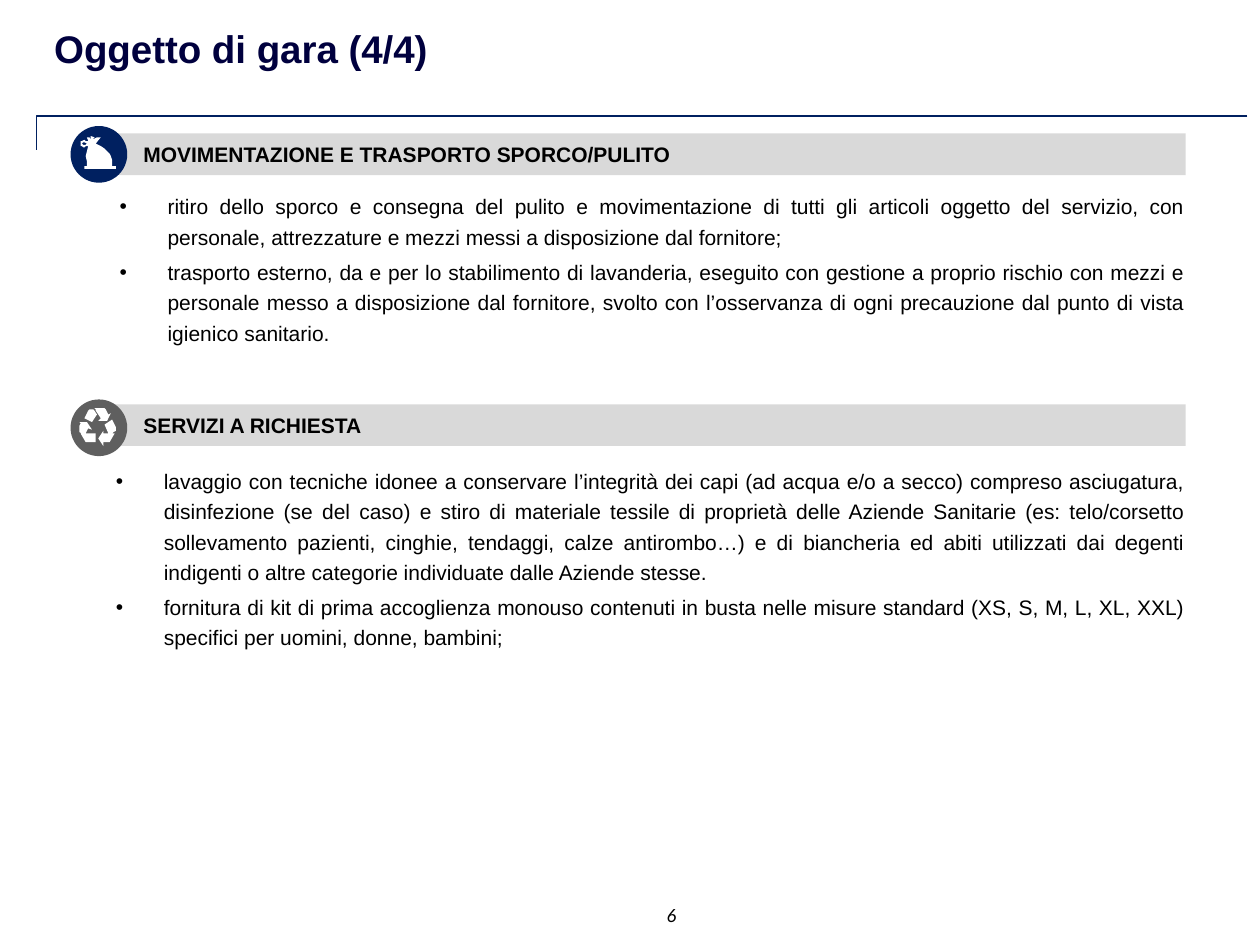
from dataclasses import dataclass

from lxml import etree
from pptx import Presentation
from pptx.dml.color import RGBColor
from pptx.enum.shapes import MSO_CONNECTOR, MSO_SHAPE
from pptx.enum.text import MSO_ANCHOR, MSO_AUTO_SIZE, PP_ALIGN
from pptx.oxml.ns import qn
from pptx.util import Pt

PX = 9144  # EMU in one px, 100 px to the inch
ELBOW = MSO_CONNECTOR.ELBOW
RECTANGLE, OVAL = MSO_SHAPE.RECTANGLE, MSO_SHAPE.OVAL
TOP, MIDDLE = MSO_ANCHOR.TOP, MSO_ANCHOR.MIDDLE
LEFT, CENTER, JUSTIFY = PP_ALIGN.LEFT, PP_ALIGN.CENTER, PP_ALIGN.JUSTIFY
NO_FIT = MSO_AUTO_SIZE.NONE
TWO_CONTENT = 3


@dataclass(frozen=True)
class Theme:
    title: str = "00003E"
    navy: str = "002060"
    grey: str = "5F5F5F"
    bar: str = "D9D9D9"
    text: str = "000000"
    white: str = "FFFFFF"
    font: str = "Arial"
    number_font: str = "Calibri"
    title_size: int = 22
    text_size: int = 12
    number_size: int = 11


# Outlines are in px on the page, one list per closed contour.
LAUNDRY_BAG = [
    [(69, 114), (67, 113), (66, 113), (65, 114), (66, 115), (67, 115), (68, 115)],
    [(70, 112), (69, 109), (71, 109), (72, 111), (72, 108), (75, 109), (73, 111),
     (77, 109), (80, 109), (76, 114), (80, 116), (83, 118), (85, 120), (87, 122),
     (88, 124), (89, 127), (89, 132), (92, 132), (92, 134), (67, 134), (67, 132),
     (69, 132), (69, 128), (68, 124), (69, 120), (70, 116), (68, 116), (67, 117),
     (66, 117), (65, 116), (64, 116), (64, 112), (65, 112), (67, 111), (68, 112)],
]
RECYCLING = [
    [(67, 332), (73, 335), (77, 329), (75, 326), (74, 325), (71, 325), (70, 326)],
    [(75, 324), (83, 324), (84, 325), (86, 329), (88, 328), (85, 334), (78, 334),
     (80, 332), (76, 326), (76, 325)],
    [(89, 333), (83, 337), (86, 344), (89, 344), (90, 343), (92, 342), (92, 339)],
    [(91, 344), (87, 351), (82, 351), (82, 354), (78, 348), (82, 342), (82, 344),
     (90, 344)],
    [(76, 351), (76, 344), (64, 344), (68, 351)],
    [(68, 344), (65, 344), (63, 343), (63, 338), (64, 336), (63, 335), (69, 335),
     (73, 341), (70, 340)],
]

MOVING = [
    "ritiro dello sporco e consegna del pulito e movimentazione di tutti gli articoli "
    "oggetto del servizio, con personale, attrezzature e mezzi messi a disposizione "
    "dal fornitore;",
    "trasporto esterno, da e per lo stabilimento di lavanderia, eseguito con gestione "
    "a proprio rischio con mezzi e personale messo a disposizione dal fornitore, svolto "
    "con l’osservanza di ogni precauzione dal punto di vista igienico sanitario.",
]
ON_REQUEST = [
    "lavaggio con tecniche idonee a conservare l’integrità dei capi (ad acqua e/o a "
    "secco) compreso asciugatura, disinfezione (se del caso) e stiro di materiale "
    "tessile di proprietà delle Aziende Sanitarie (es: telo/corsetto sollevamento "
    "pazienti, cinghie, tendaggi, calze antirombo…) e di biancheria ed abiti utilizzati "
    "dai degenti indigenti o altre categorie individuate dalle Aziende stesse.",
    "fornitura di kit di prima accoglienza monouso contenuti in busta nelle misure "
    "standard (XS, S, M, L, XL, XXL) specifici per uomini, donne, bambini;",
]


class Page:
    def __init__(self, deck, theme):
        self.theme = theme
        self.slide = deck.slides.add_slide(deck.slide_layouts[TWO_CONTENT])
        self.shapes = self.slide.shapes

    def place(self, shape, left, top, width, height):
        shape.left, shape.top = round(left * PX), round(top * PX)
        shape.width, shape.height = round(width * PX), round(height * PX)

    def style(self, paragraph, size, color, align, font=None, bold=False, italic=False):
        paragraph.alignment = align
        paragraph.font.name = font or self.theme.font
        paragraph.font.size = Pt(size)
        paragraph.font.bold, paragraph.font.italic = bold, italic
        paragraph.font.color.rgb = RGBColor.from_string(color)

    def indent(self, paragraph, left, first=0):
        properties = paragraph._p.get_or_add_pPr()
        properties.set("marL", str(left * PX))
        properties.set("indent", str(first * PX))

    def clear_margins(self, frame):
        frame.margin_left = frame.margin_right = 0
        frame.margin_top = frame.margin_bottom = 0

    def paint(self, shape, color):
        shape.shadow.inherit = False
        shape.fill.solid()
        shape.fill.fore_color.rgb = RGBColor.from_string(color)
        shape.line.fill.background()

    def title(self, text, *area):
        box = self.shapes.title
        self.place(box, *area)
        frame = box.text_frame
        frame.text = text
        frame.word_wrap = False
        frame.auto_size, frame.vertical_anchor = NO_FIT, TOP
        self.style(frame.paragraphs[0], self.theme.title_size, self.theme.title, LEFT, bold=True)

    def corner_rule(self, left, top, right, bottom):
        """Draw a line from the right end to the left, then down."""
        rule = self.shapes.add_connector(ELBOW, right * PX, top * PX, left * PX, bottom * PX)
        rule.line.color.rgb = RGBColor.from_string(self.theme.navy)
        rule.line.width = Pt(1)
        properties = rule._element.spPr
        properties.find(qn("a:prstGeom")).set("prst", "bentConnector2")
        etree.SubElement(properties, qn("a:effectLst"))

    def heading(self, text, top):
        bar = self.shapes.add_shape(RECTANGLE, 75 * PX, top * PX, 866 * PX, 33 * PX)
        self.paint(bar, self.theme.bar)
        frame = bar.text_frame
        frame.text, frame.vertical_anchor = text, MIDDLE
        paragraph = frame.paragraphs[0]
        self.indent(paragraph, 29)
        self.style(paragraph, self.theme.text_size, self.theme.text, LEFT, bold=True)

    def icon(self, top, color, contours):
        disc = self.shapes.add_shape(OVAL, 56 * PX, top * PX, 45 * PX, 45 * PX)
        self.paint(disc, color)
        builder = self.shapes.build_freeform(*contours[0][0], scale=PX)
        for number, (start, *rest) in enumerate(contours):
            if number:
                builder.move_to(*start)
            builder.add_line_segments(rest, close=True)
        self.paint(builder.convert_to_shape(), self.theme.white)

    def bullets(self, index, items, *area):
        box = self.slide.placeholders[index]
        self.place(box, *area)
        frame = box.text_frame
        frame.text = "\n".join(items)
        frame.word_wrap = True
        frame.auto_size, frame.vertical_anchor = NO_FIT, TOP
        self.clear_margins(frame)
        for paragraph in frame.paragraphs:
            self.indent(paragraph, 38, -38)
            paragraph.line_spacing = 1.2
            paragraph.space_before, paragraph.space_after = Pt(0), Pt(3)
            self.style(paragraph, self.theme.text_size, self.theme.text, JUSTIFY)

    def page_number(self, text, *area):
        box = self.shapes.add_textbox(*(length * PX for length in area))
        frame = box.text_frame
        frame.text, frame.word_wrap = text, True
        self.clear_margins(frame)
        self.style(frame.paragraphs[0], self.theme.number_size, self.theme.text, CENTER,
                   font=self.theme.number_font, italic=True)


def main():
    deck = Presentation()
    deck.slide_width, deck.slide_height = 1000 * PX, 750 * PX
    theme = Theme()
    page = Page(deck, theme)
    page.corner_rule(29, 92, 990, 119)
    page.title("Oggetto di gara (4/4)", 33, 15, 321, 47)
    page.heading("MOVIMENTAZIONE E TRASPORTO SPORCO/PULITO", 106)
    page.icon(100, theme.navy, LAUNDRY_BAG)
    page.bullets(1, MOVING, 95, 150, 846, 167)
    page.heading("SERVIZI A RICHIESTA", 321)
    page.icon(317, theme.grey, RECYCLING)
    page.bullets(2, ON_REQUEST, 92, 368, 849, 244)
    page.page_number("6", 504, 717, 58, 19)
    deck.save("out.pptx")


if __name__ == "__main__":
    main()
